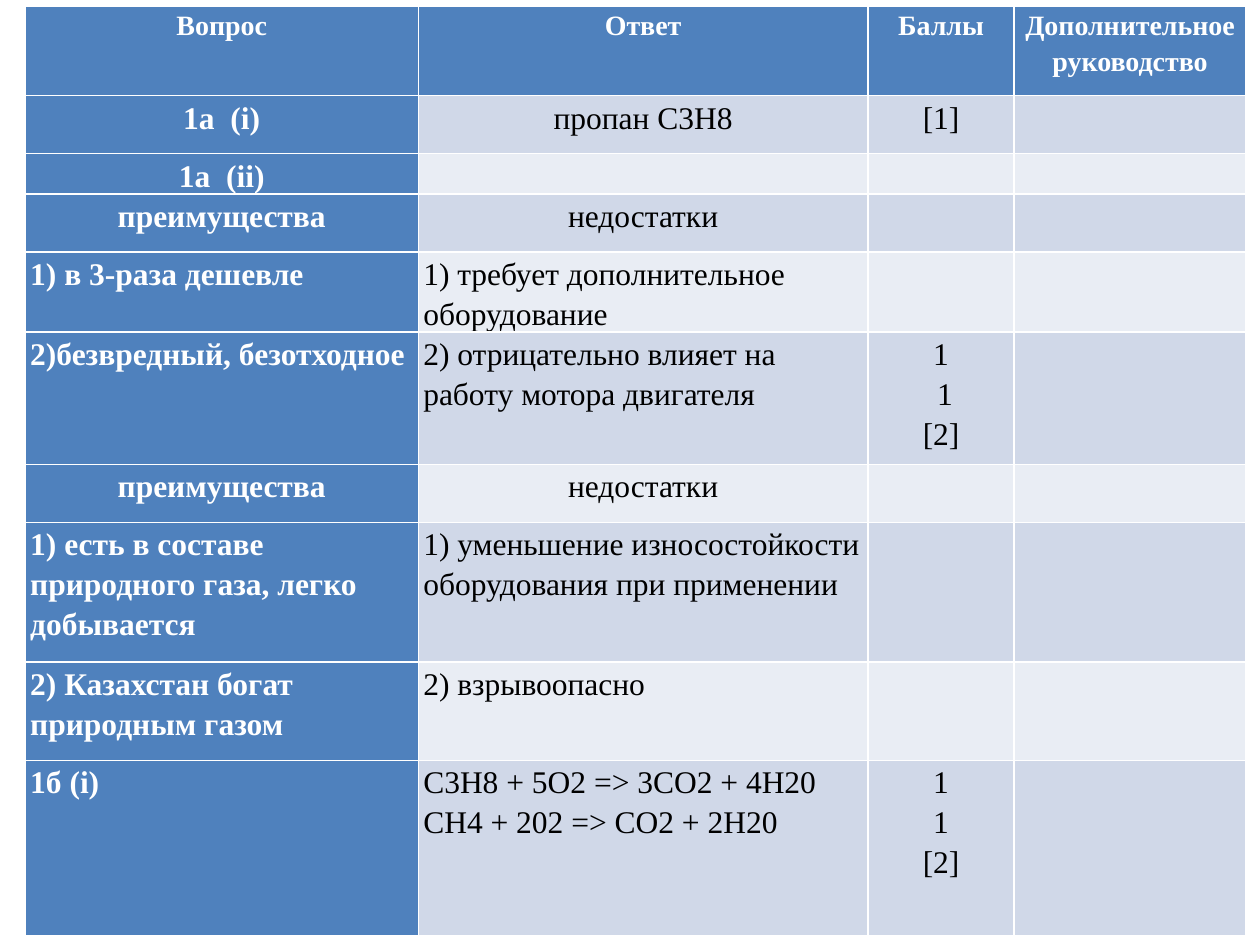
from pptx import Presentation
from pptx.dml.color import RGBColor
from pptx.enum.text import PP_ALIGN
from pptx.util import Inches, Pt

LEFT, CENTER = PP_ALIGN.LEFT, PP_ALIGN.CENTER
FONT = "Times New Roman"
COLORS = {
    "heading": "4F81BD",
    "odd_band": "D0D8E8",
    "even_band": "E9EDF4",
    "heading_text": "FFFFFF",
    "body_text": "000000",
}

COLUMN_WIDTHS = [3.12, 3.57, 1.16, 1.84]

# Row height, alignment of question and answer, then the cell texts
ROWS = [
    (0.71, CENTER, ["Вопрос", "Ответ", "Баллы", "Дополнительное руководство"]),
    (0.46, CENTER, ["1а  (і)", "пропан С3Н8", "[1]", ""]),
    (0.32, CENTER, ["1а  (іі)", "", "", ""]),
    (0.46, CENTER, ["преимущества", "недостатки", "", ""]),
    (0.61, LEFT, ["1) в 3-раза дешевле",
                  "1) требует дополнительное оборудование", "", ""]),
    (1.05, LEFT, ["2)безвредный, безотходное",
                  "2) отрицательно влияет на работу мотора двигателя",
                  "1\n 1\n[2]", ""]),
    (0.46, CENTER, ["преимущества", "недостатки", "", ""]),
    (1.11, LEFT, ["1) есть в составе природного газа, легко добывается",
                  "1) уменьшение износостойкости оборудования при применении",
                  "", ""]),
    (0.78, LEFT, ["2) Казахстан богат природным газом",
                  "2) взрывоопасно", "", ""]),
    (1.39, LEFT, ["1б (і)",
                  "С3Н8 + 5О2 => 3CO2 + 4H20\nCH4 + 202 => CO2 + 2H20",
                  "1\n1\n[2]", ""]),
]

prs = Presentation()
prs.slide_width, prs.slide_height = Inches(10), Inches(7.5)
slide = prs.slides.add_slide(prs.slide_layouts[6])

# Marking scheme: the default table style supplies the white borders
scheme = slide.shapes.add_table(
    len(ROWS), len(COLUMN_WIDTHS), Inches(0.2), Inches(0.05),
    Inches(sum(COLUMN_WIDTHS)), Inches(sum(row[0] for row in ROWS))).table
scheme.first_col = True
for column, width in zip(scheme.columns, COLUMN_WIDTHS):
    column.width = Inches(width)

# Cells
for r, (height, alignment, texts) in enumerate(ROWS):
    scheme.rows[r].height = Inches(height)
    band = "odd_band" if r % 2 else "even_band"
    for c, text in enumerate(texts):
        is_heading = r == 0 or c == 0
        cell = scheme.cell(r, c)
        cell.margin_left = cell.margin_right = Inches(0.04)
        cell.margin_top = cell.margin_bottom = 0
        cell.fill.solid()
        cell.fill.fore_color.rgb = RGBColor.from_string(
            COLORS["heading" if is_heading else band])
        cell.text = text
        for paragraph in cell.text_frame.paragraphs:
            paragraph.alignment = alignment if c < 2 else CENTER
            paragraph.line_spacing = 1.15
            paragraph.font.name = FONT
            paragraph.font.size = Pt(16 if r == 0 else 18)
            paragraph.font.bold = is_heading
            paragraph.font.color.rgb = RGBColor.from_string(
                COLORS["heading_text" if is_heading else "body_text"])

prs.save("out.pptx")
